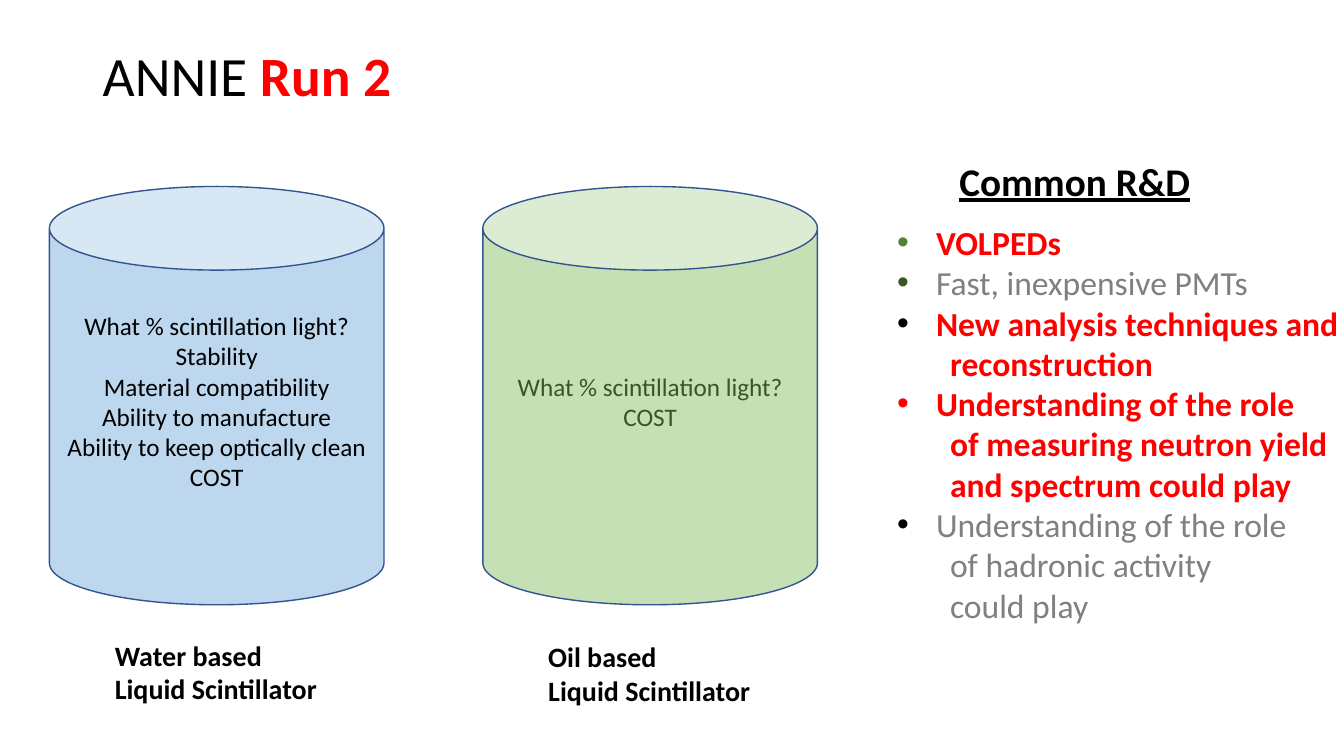
from lxml import etree
from pptx import Presentation
from pptx.dml.color import RGBColor
from pptx.enum import shapes, text
from pptx.oxml import ns
from pptx.util import Pt

COLORS = {
    "black": "000000", "red": "FF0000", "gray": "808080", "outline": "325491",
    "water": "BDD7EE", "oil": "C5E0B4", "dark green": "385723", "green": "548235",
}


def style(font, size, color, bold=False):
    font.name = "Calibri"
    font.size = Pt(size)
    font.bold = bold
    font.color.rgb = RGBColor.from_string(COLORS[color])


def add_label(slide, left, top, width, height, lines, size):
    frame = slide.shapes.add_textbox(Pt(left), Pt(top), Pt(width), Pt(height)).text_frame
    frame.word_wrap = False
    frame.text = "\n".join(lines)
    for paragraph in frame.paragraphs:
        style(paragraph.font, size, "black", True)
    return frame


presentation = Presentation()
presentation.slide_width = Pt(960)
presentation.slide_height = Pt(540)
slide = presentation.slides.add_slide(presentation.slide_layouts[1])

title = slide.shapes.title
title.left, title.top, title.width, title.height = Pt(66.2), Pt(28.8), Pt(828), Pt(54.7)
title.text_frame.vertical_anchor = text.MSO_ANCHOR.MIDDLE
title_paragraph = title.text_frame.paragraphs[0]
title_paragraph.alignment = text.PP_ALIGN.LEFT
title_paragraph.line_spacing = 0.9
for words, color, bold in [("ANNIE ", "black", False), ("Run 2", "red", True)]:
    run = title_paragraph.add_run()
    run.text = words
    style(run.font, 39.6, color, bold)

tanks = [
    (35.3, "water", "black", 452.2, "Water based",
     ["What % scintillation light?", "Stability", "Material compatibility",
      "Ability to manufacture", "Ability to keep optically clean", "COST"]),
    (344.9, "oil", "dark green", 453.6, "Oil based",
     ["What % scintillation light?", "COST"]),
]
for left, fill, color, label_top, name, issues in tanks:
    tank = slide.shapes.add_shape(
        shapes.MSO_SHAPE.CAN, Pt(left), Pt(133.2), Pt(239), Pt(298.8))
    tank.shadow.inherit = False
    tank.fill.solid()
    tank.fill.fore_color.rgb = RGBColor.from_string(COLORS[fill])
    tank.line.color.rgb = RGBColor.from_string(COLORS["outline"])
    tank.line.width = Pt(1)
    frame = tank.text_frame
    frame.vertical_anchor = text.MSO_ANCHOR.MIDDLE
    frame.margin_bottom = Pt(25.6)
    frame.text = "\n".join(issues)
    for paragraph in frame.paragraphs:
        paragraph.alignment = text.PP_ALIGN.CENTER
        style(paragraph.font, 18, color)
    add_label(slide, left + 39.6, label_top, 159.8, 55.4, [name, "Liquid Scintillator"], 20)

topics = [
    ("green", "red", ["VOLPEDs"]),
    ("dark green", "gray", ["Fast, inexpensive PMTs"]),
    ("black", "red", ["New analysis techniques and", "reconstruction"]),
    ("red", "red", ["Understanding of the role", "of measuring neutron yield",
                    "and spectrum could play"]),
    ("black", "gray", ["Understanding of the role", "of hadronic activity", "could play"]),
]
body = slide.placeholders[1]
body.left, body.top, body.width, body.height = Pt(633.6), Pt(154.8), Pt(333.4), Pt(298.1)
frame = body.text_frame
frame.word_wrap = False
frame.auto_size = text.MSO_AUTO_SIZE.NONE
frame.text = "\n".join(line for topic in topics for line in topic[2])
paragraphs = iter(frame.paragraphs)
for bullet_color, color, lines in topics:
    for number, line in enumerate(lines):
        paragraph = next(paragraphs)
        paragraph.alignment = text.PP_ALIGN.LEFT
        paragraph.line_spacing = 1.0
        paragraph.space_before = Pt(0)
        properties = paragraph._p.get_or_add_pPr()
        first = number == 0
        properties.set("marL", str(Pt(27.8 if first else 37.8)))
        properties.set("indent", str(Pt(-27.8 if first else 0)))
        if first:
            bullet = etree.SubElement(properties, ns.qn("a:buClr"))
            etree.SubElement(bullet, ns.qn("a:srgbClr"), val=COLORS[bullet_color])
            etree.SubElement(properties, ns.qn("a:buFont"), typeface="Arial")
            etree.SubElement(properties, ns.qn("a:buChar"), char="•")
        else:
            etree.SubElement(properties, ns.qn("a:buNone"))
        style(paragraph.font, 24, color, color == "red")

heading = add_label(slide, 678.2, 108.7, 180.7, 41, ["Common R&D"], 28)
heading.paragraphs[0].font.underline = True

presentation.save("out.pptx")
